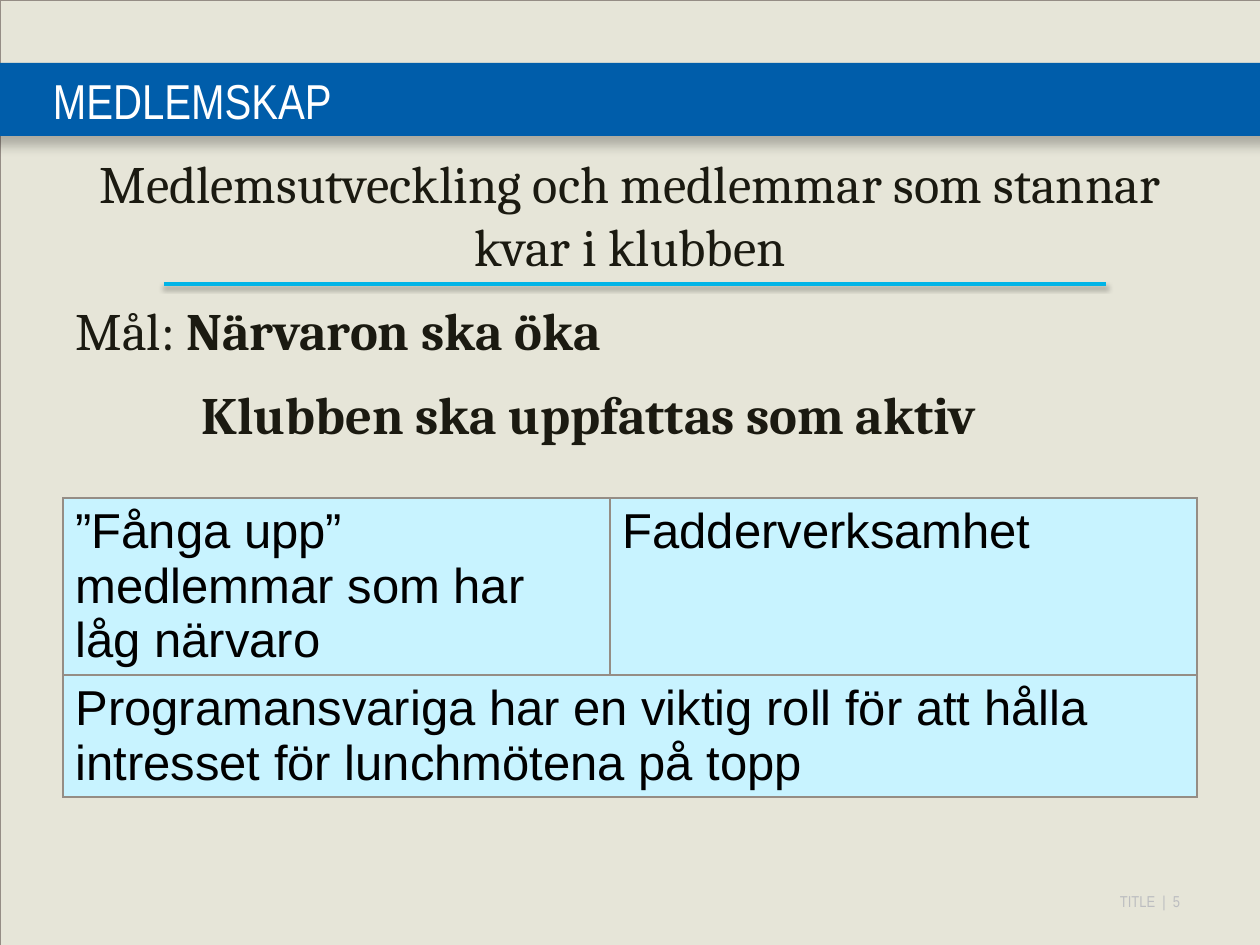
from dataclasses import dataclass

from lxml import etree
from pptx import Presentation
from pptx.dml.color import RGBColor
from pptx.enum.shapes import MSO_CONNECTOR, MSO_SHAPE
from pptx.enum.text import MSO_ANCHOR, MSO_AUTO_SIZE, PP_ALIGN
from pptx.oxml import parse_xml
from pptx.oxml.ns import nsdecls, qn
from pptx.util import Emu, Pt

RECTANGLE = MSO_SHAPE.RECTANGLE
STRAIGHT = MSO_CONNECTOR.STRAIGHT
MIDDLE = MSO_ANCHOR.MIDDLE
NO_AUTOFIT = MSO_AUTO_SIZE.NONE
LEFT, CENTER, RIGHT = PP_ALIGN.LEFT, PP_ALIGN.CENTER, PP_ALIGN.RIGHT

PX_PER_INCH = 126
COLORS = {
    "paper": "E6E5D8",
    "frame": "958D85",
    "band": "005DAA",
    "white": "FFFFFF",
    "ink": "1B1A11",
    "rule": "01B4E7",
    "cell": "C8F3FF",
    "black": "000000",
    "footer": "BCBDC0",
}


@dataclass(frozen=True)
class Style:
    font: str
    size: int
    color: str


@dataclass(frozen=True)
class Span:
    text: str
    bold: bool = False


@dataclass(frozen=True)
class Line:
    spans: tuple[Span, ...]
    align: PP_ALIGN = LEFT
    space_before: int = 0
    tabs: tuple[int, ...] = ()


@dataclass(frozen=True)
class Shadow:
    alpha: int
    blur: float
    distance: float


@dataclass(frozen=True)
class Activity:
    row: int
    column: int
    text: str


TITLE_STYLE = Style("Arial Narrow", 28, "white")
BODY_STYLE = Style("Cambria", 30, "ink")
CELL_STYLE = Style("Arial", 28, "black")
FOOTER_STYLE = Style("Arial Narrow", 9, "footer")

GOALS = (
    Line((Span("Medlemsutveckling och medlemmar som stannar kvar i klubben"),), CENTER),
    Line((Span("Mål: "), Span("Närvaron ska öka", True)), LEFT, 12),
    Line((Span("\t\tKlubben ska uppfattas som aktiv", True),), LEFT, 12, (63, 126)),
)
ACTIVITIES = (
    Activity(0, 0, "”Fånga upp” medlemmar som har låg närvaro"),
    Activity(0, 1, "Fadderverksamhet"),
    Activity(1, 0, "Programansvariga har en viktig roll för att hålla intresset för lunchmötena på topp"),
)
COLUMN_WIDTHS = (547, 587)
ROW_HEIGHTS = (177, 122)


def px(length: int) -> Emu:
    return Emu(round(length * 914400 / PX_PER_INCH))


def rgb(name: str) -> RGBColor:
    return RGBColor.from_string(COLORS[name])


def place(shape, left: int, top: int, width: int, height: int) -> None:
    shape.left, shape.top = px(left), px(top)
    shape.width, shape.height = px(width), px(height)


def clear_margins(frame) -> None:
    frame.margin_left = frame.margin_right = frame.margin_top = frame.margin_bottom = 0


def write(frame, lines: tuple[Line, ...], style: Style) -> None:
    frame.word_wrap = True
    for index, line in enumerate(lines):
        paragraph = frame.paragraphs[0] if index == 0 else frame.add_paragraph()
        paragraph.alignment = line.align
        paragraph.space_before = Pt(line.space_before)
        properties = paragraph._p.get_or_add_pPr()
        properties.set("marL", "0")
        properties.set("indent", "0")
        etree.SubElement(properties, qn("a:buNone"))
        if line.tabs:
            stops = etree.SubElement(properties, qn("a:tabLst"))
            for position in line.tabs:
                etree.SubElement(stops, qn("a:tab"), pos=str(px(position)), algn="l")
        for span in line.spans:
            run = paragraph.add_run()
            run.text = span.text
            run.font.name = style.font
            run.font.size = Pt(style.size)
            run.font.bold = span.bold
            run.font.color.rgb = rgb(style.color)


def cast_shadow(shape, shadow: Shadow) -> None:
    shape._element.spPr.append(parse_xml(
        f'<a:effectLst {nsdecls("a")}><a:outerShdw blurRad="{Pt(shadow.blur)}" '
        f'dist="{Pt(shadow.distance)}" dir="5400000" algn="t" rotWithShape="0">'
        f'<a:srgbClr val="{COLORS["black"]}"><a:alpha val="{shadow.alpha * 1000}"/>'
        '</a:srgbClr></a:outerShdw></a:effectLst>'
    ))


def add_frame(slide) -> None:
    frame = slide.shapes.add_shape(RECTANGLE, 0, 0, px(1260), px(945))
    frame.fill.background()
    frame.line.color.rgb = rgb("frame")
    frame.line.width = Pt(0.13)
    frame.shadow.inherit = False


def add_band(slide) -> None:
    band = slide.shapes.add_shape(RECTANGLE, px(-10), px(63), px(1281), px(73))
    band.fill.solid()
    band.fill.fore_color.rgb = rgb("band")
    band.line.fill.background()
    cast_shadow(band, Shadow(25, 7, 4.8))


def add_rule(slide) -> None:
    rule = slide.shapes.add_connector(STRAIGHT, px(164), px(284), px(1106), px(284))
    rule.line.color.rgb = rgb("rule")
    rule.line.width = Pt(2)
    cast_shadow(rule, Shadow(38, 3.1, 1.6))


def add_borders(cell) -> None:
    properties = cell._tc.get_or_add_tcPr()
    for side in ("lnL", "lnR", "lnT", "lnB"):
        properties.append(parse_xml(
            f'<a:{side} {nsdecls("a")} w="{Pt(1)}"><a:solidFill>'
            f'<a:srgbClr val="{COLORS["frame"]}"/></a:solidFill></a:{side}>'
        ))


def add_activities(slide) -> None:
    table = slide.shapes.add_table(
        len(ROW_HEIGHTS), len(COLUMN_WIDTHS), px(63), px(498),
        px(sum(COLUMN_WIDTHS)), px(sum(ROW_HEIGHTS)),
    ).table
    table.first_row = table.horz_banding = False
    for column, width in zip(table.columns, COLUMN_WIDTHS):
        column.width = px(width)
    for row, height in zip(table.rows, ROW_HEIGHTS):
        row.height = px(height)
    for cell in table.iter_cells():
        add_borders(cell)
        cell.fill.solid()
        cell.fill.fore_color.rgb = rgb("cell")
    table.cell(1, 0).merge(table.cell(1, 1))
    for activity in ACTIVITIES:
        cell = table.cell(activity.row, activity.column)
        write(cell.text_frame, (Line((Span(activity.text),)),), CELL_STYLE)


def main() -> None:
    deck = Presentation()
    deck.slide_width, deck.slide_height = px(1260), px(945)
    slide = deck.slides.add_slide(deck.slide_layouts[1])
    slide.background.fill.solid()
    slide.background.fill.fore_color.rgb = rgb("paper")
    title, goals = slide.shapes.title, slide.placeholders[1]

    page_label = slide.shapes.add_textbox(px(960), px(892), px(220), px(19))
    clear_margins(page_label.text_frame)
    write(page_label.text_frame, (Line((Span("TITLE  |  "), Span("5")), RIGHT),), FOOTER_STYLE)
    add_frame(slide)
    add_band(slide)

    for placeholder in (title, goals):
        slide.shapes.element.append(placeholder.element)
        placeholder.text_frame.auto_size = NO_AUTOFIT
    place(title, 53, 63, 1207, 73)
    clear_margins(title.text_frame)
    title.text_frame.vertical_anchor = MIDDLE
    write(title.text_frame, (Line((Span("MEDLEMSKAP"),)),), TITLE_STYLE)
    place(goals, 63, 145, 1134, 704)
    write(goals.text_frame, GOALS, BODY_STYLE)

    add_rule(slide)
    add_activities(slide)
    deck.save("out.pptx")


if __name__ == "__main__":
    main()
